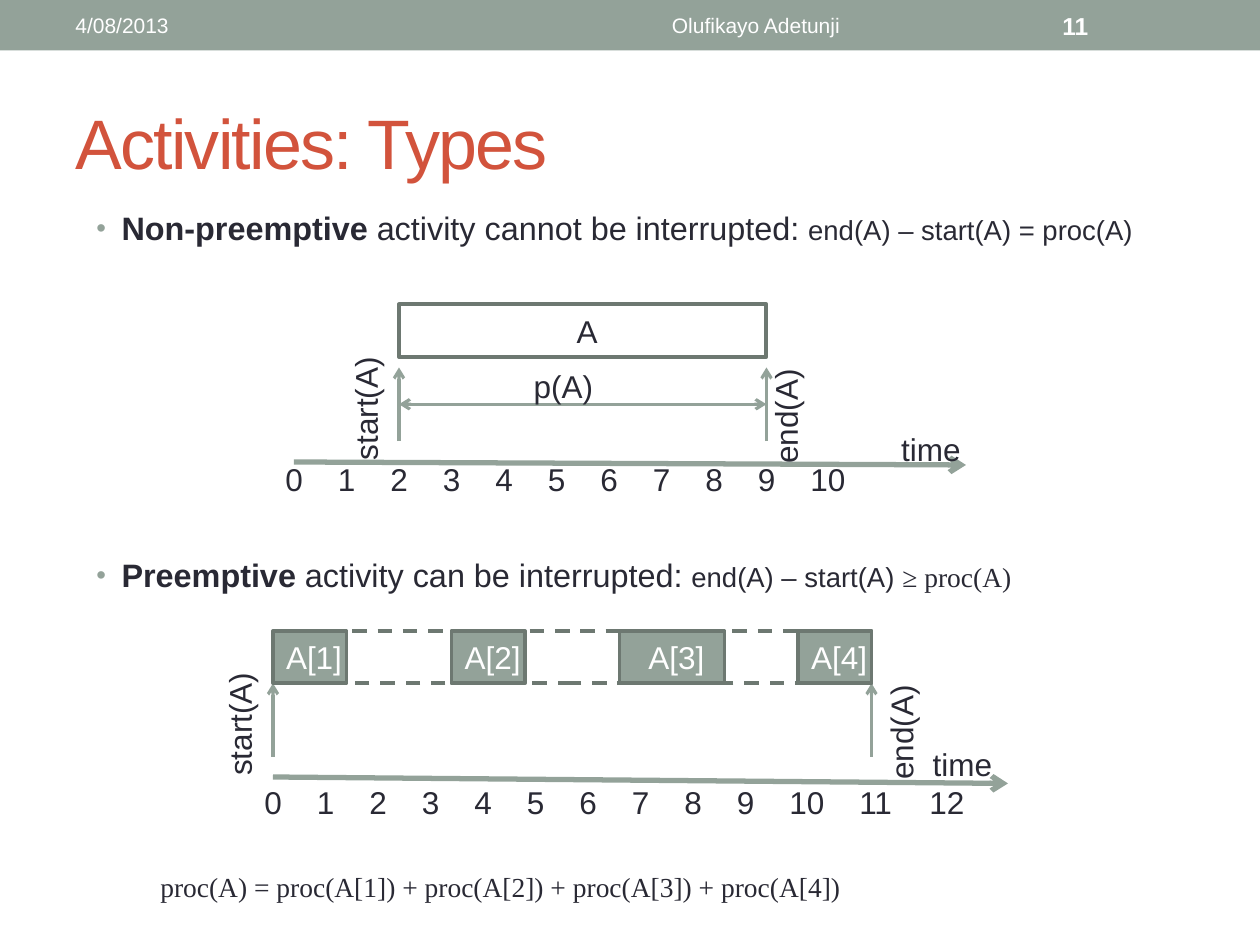
from lxml.etree import SubElement
from pptx import Presentation
from pptx.dml.color import RGBColor
from pptx.enum.dml import MSO_LINE
from pptx.enum.shapes import MSO_CONNECTOR, MSO_SHAPE
from pptx.enum.text import MSO_ANCHOR, PP_ALIGN
from pptx.oxml.ns import qn
from pptx.util import Pt

SAGE, DARK_SAGE, RED, INK, WHITE = "93A299", "6D7871", "D2533C", "292934", "FFFFFF"
TICK = 30
LABEL_INDENT = 5
PADDED = (7.2, 3.6, 7.2, 3.6)


def color(hex_value):
    return RGBColor.from_string(hex_value)


def style_run(run, size, hex_value, bold=False, font="Arial"):
    run.font.size = Pt(size)
    run.font.name = font
    run.font.bold = bold
    run.font.color.rgb = color(hex_value)


def set_insets(frame, left, top, right, bottom):
    frame.margin_left, frame.margin_top = Pt(left), Pt(top)
    frame.margin_right, frame.margin_bottom = Pt(right), Pt(bottom)


def add_text(slide, box, text, size=18, hex_value=INK, bold=False, insets=PADDED,
             anchor=MSO_ANCHOR.TOP, align=PP_ALIGN.LEFT):
    text_box = slide.shapes.add_textbox(*map(Pt, box))
    frame = text_box.text_frame
    frame.word_wrap = True
    frame.vertical_anchor = anchor
    set_insets(frame, *insets)
    paragraph = frame.paragraphs[0]
    paragraph.text = text
    paragraph.alignment = align
    style_run(paragraph.runs[0], size, hex_value, bold)
    return text_box


def add_label(slide, box, text):
    add_text(slide, box, text, insets=(LABEL_INDENT, 0, 0, 0))


def add_upward_label(slide, box, text):
    label = add_text(slide, box, text, insets=(0, 0, 0, LABEL_INDENT))
    label.element.txBody.find(qn("a:bodyPr")).set("vert", "vert270")


def add_block(slide, box, text="", fill=None, line=DARK_SAGE, width=2.08, text_color=WHITE):
    block = slide.shapes.add_shape(MSO_SHAPE.RECTANGLE, *map(Pt, box))
    block.shadow.inherit = False
    if fill:
        block.fill.solid()
        block.fill.fore_color.rgb = color(fill)
    else:
        block.fill.background()
    if line:
        block.line.color.rgb = color(line)
        block.line.width = Pt(width)
    else:
        block.line.fill.background()
    if text:
        frame = block.text_frame
        set_insets(frame, LABEL_INDENT, 0, 0, 0)
        frame.vertical_anchor = MSO_ANCHOR.MIDDLE
        frame.text = text
        frame.paragraphs[0].alignment = PP_ALIGN.CENTER
        style_run(frame.paragraphs[0].runs[0], 18, text_color)
    return block


def add_arrow(slide, start, end, width=1.75, both_ends=False):
    arrow = slide.shapes.add_connector(MSO_CONNECTOR.STRAIGHT, *map(Pt, start + end))
    arrow.line.color.rgb = color(SAGE)
    arrow.line.width = Pt(width)
    outline = arrow.line._get_or_add_ln()
    for tag in ("a:headEnd", "a:tailEnd") if both_ends else ("a:tailEnd",):
        SubElement(outline, qn(tag), type="arrow")
    SubElement(arrow.element.spPr, qn("a:effectLst"))


def add_tick_numbers(slide, left, top, last):
    """Numbers 0 to last on tab stops; two-digit numbers take a wider step."""
    numbers = add_text(slide, (left, top, 432, 29), "\t".join(map(str, range(last + 1))))
    properties = numbers.text_frame.paragraphs[0]._p.get_or_add_pPr()
    stops = SubElement(properties, qn("a:tabLst"))
    for number in range(1, last + 1):
        position = TICK * number + 10 * max(0, number - 10)
        SubElement(stops, qn("a:tab"), pos=str(Pt(position)), algn="l")


def add_timeline(slide, axis_start, axis_end, numbers_top, last, time_at):
    add_arrow(slide, axis_start, axis_end, width=3)
    add_tick_numbers(slide, axis_start[0] - 12, numbers_top, last)
    add_label(slide, (*time_at, 66, 21.6), "time")


def add_header(slide):
    add_block(slide, (0, 0, 720, 28.8), fill=SAGE, line=None)
    middle = MSO_ANCHOR.MIDDLE
    add_text(slide, (36, 1.5, 228, 26), "4/08/2013", 12, WHITE, anchor=middle)
    add_text(slide, (270, 1.5, 324, 26), "Olufikayo Adetunji", 12, WHITE,
             anchor=middle, align=PP_ALIGN.CENTER)
    add_text(slide, (600, 1.5, 84, 26), "11", 14, WHITE, bold=True, anchor=middle)
    title = add_text(slide, (36, 42, 648, 78), "Activities: Types", 40, RED, anchor=middle)
    title.text_frame.paragraphs[0].runs[0].font._element.set("spc", "-100")


def add_statements(slide):
    """Two bulleted definitions and the closing formula, spaced around the diagrams."""
    serif = "Times New Roman"
    statements = [
        (0, True, [("Non-preemptive ", 18.5, True, "Arial"),
                   ("activity cannot be interrupted: ", 18.5, False, "Arial"),
                   ("end(A) – start(A) = proc(A)", 15.7, False, "Arial")]),
        (175.8, True, [("Preemptive ", 18.5, True, "Arial"),
                       ("activity can be interrupted: ", 18.5, False, "Arial"),
                       ("end(A) – start(A) ", 15.7, False, "Arial"),
                       ("≥ proc(A)", 15.7, False, serif)]),
        (157.7, False, [("proc(A) = proc(A[1]) + proc(A[2]) + proc(A[3]) + proc(A[4])",
                         15.7, False, serif)]),
    ]
    body = slide.shapes.add_textbox(Pt(48), Pt(115.6), Pt(660), Pt(406))
    frame = body.text_frame
    frame.word_wrap = True
    for index, (gap, bulleted, parts) in enumerate(statements):
        paragraph = frame.add_paragraph() if index else frame.paragraphs[0]
        paragraph.space_before = Pt(gap)
        for text, size, bold, font in parts:
            run = paragraph.add_run()
            run.text = text
            style_run(run, size, INK, bold, font)
        properties = paragraph._p.get_or_add_pPr()
        properties.set("marL", str(Pt(14.4 if bulleted else 36.5)))
        if bulleted:
            properties.set("indent", str(-Pt(14.4)))
            bullet_color = SubElement(properties, qn("a:buClr"))
            SubElement(bullet_color, qn("a:srgbClr"), val=SAGE)
            SubElement(properties, qn("a:buSzPct"), val="85000")
            SubElement(properties, qn("a:buFont"), typeface="Arial")
            SubElement(properties, qn("a:buChar"), char="•")


def add_non_preemptive_diagram(slide):
    origin = 168
    start, end = origin + 2 * TICK, origin + 9 * TICK
    add_timeline(slide, (origin, 264), (552, 265.7), 259.2, 10, (510, 245.5))
    add_block(slide, (start, 174, end - start, 30), "A", width=2.25, text_color=INK)
    for edge in (start, end):
        add_arrow(slide, (edge, 252), (edge, 210))
    add_arrow(slide, (start, 231), (end, 231), both_ends=True)
    add_upward_label(slide, (198, 186, 21.6, 82), "start(A)")
    add_upward_label(slide, (438, 186, 21.6, 84), "end(A)")
    add_label(slide, (300, 210, 66, 21.6), "p(A)")


def add_preemptive_diagram(slide):
    start, end, top, height = 156, 498, 360.5, 30
    add_timeline(slide, (start, 444), (576, 447.7), 444, 12, (528, 425.5))
    for edge in (start, end):
        add_arrow(slide, (edge, 432.5), (edge, 390.5))
    add_upward_label(slide, (126, 372, 21.6, 76.3), "start(A)")
    add_upward_label(slide, (504, 390, 21.6, 60.5), "end(A)")
    span = add_block(slide, (start, top, end - start, height))
    span.line.dash_style = MSO_LINE.DASH
    pieces = [(start, 42), (258, 42), (354, 60), (456, 42)]
    for number, (left, width) in enumerate(pieces, 1):
        add_block(slide, (left, top, width, height), f"A[{number}]", fill=SAGE)


def main():
    presentation = Presentation()
    presentation.slide_width, presentation.slide_height = Pt(720), Pt(540)
    slide = presentation.slides.add_slide(presentation.slide_layouts[6])
    add_header(slide)
    add_statements(slide)
    add_non_preemptive_diagram(slide)
    add_preemptive_diagram(slide)
    presentation.save("out.pptx")


if __name__ == "__main__":
    main()
